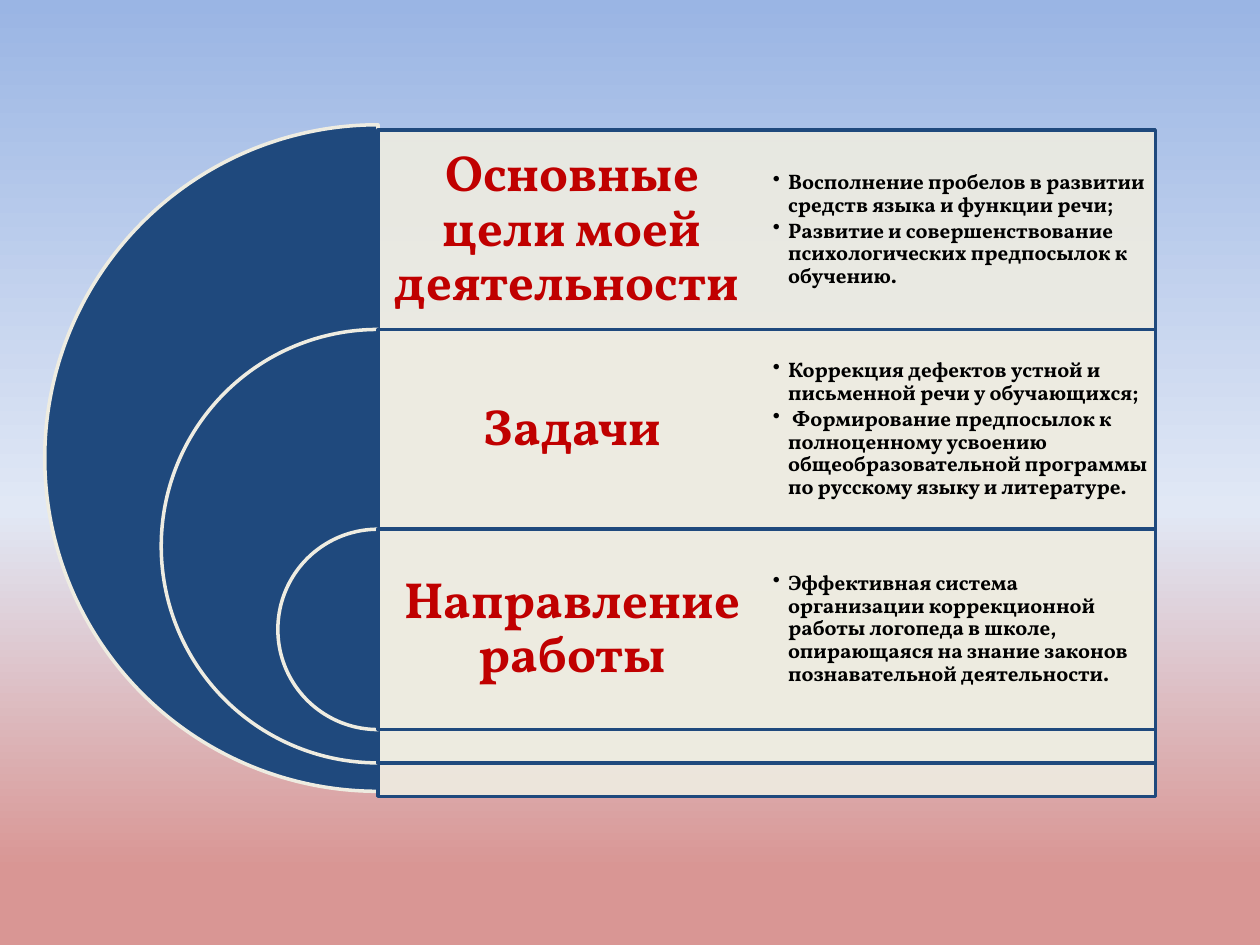
from copy import deepcopy

from lxml.etree import SubElement
from pptx import Presentation
from pptx.dml.color import RGBColor
from pptx.enum.shapes import MSO_SHAPE
from pptx.enum.text import MSO_ANCHOR, PP_ALIGN
from pptx.oxml.ns import qn
from pptx.util import Inches, Pt

# Content: heading and bullet points of each band
BANDS = [
    ("Основные цели моей деятельности ", [
        "Восполнение пробелов в развитии средств языка и функции речи;",
        "Развитие и совершенствование психологических предпосылок к обучению."]),
    ("Задачи", [
        "Коррекция дефектов устной и письменной речи у обучающихся;",
        " Формирование предпосылок к полноценному усвоению общеобразовательной "
        "программы по русскому языку и литературе."]),
    ("Направление работы", [
        "Эффективная система организации коррекционной работы логопеда в школе, "
        "опирающаяся на знание законов познавательной деятельности."]),
]
BACKGROUND = [(0, "9AB5E4"), (54, "E1E8F5"), (92, "D99694")]
NAVY, CREAM, RED, BLACK = "1F497D", "EEECE1", "C00000", "000000"
HEADING = {"margin": 0.12, "align": PP_ALIGN.CENTER, "after": 10.15,
           "font": {"size": Pt(29), "name": "Vollkorn", "bold": True}}
POINTS = {"margin": 0.05, "align": PP_ALIGN.LEFT, "after": 1.8,
          "font": {"size": Pt(12), "name": "Vollkorn", "bold": True}}

# Layout in inches
AXIS, TOP, COLUMN, BAND = 3, 1.03, 3.085, 1.585
DIAMETERS = [5.29, 3.44, 1.59]
PIE_TOPS = [0.99, TOP + BAND, TOP + 2 * BAND]


def color(value):
    return RGBColor.from_string(value)


def paint_background(slide):
    fill = slide.background.fill
    fill.gradient()
    fill.gradient_angle = 270
    stops = slide.background._cSld.find(".//" + qn("a:gsLst"))
    stops.append(deepcopy(stops[-1]))
    for stop, (position, shade) in zip(fill.gradient_stops, BACKGROUND):
        stop.position = position / 100
        stop.color.rgb = color(shade)


def add_panel(slide, kind, box, fill, line):
    panel = slide.shapes.add_shape(kind, *map(Inches, box))
    panel.shadow.inherit = False
    panel.fill.solid()
    panel.fill.fore_color.rgb = color(fill)
    panel.line.color.rgb = color(line)
    panel.line.width = Pt(2)
    return panel


def add_bullet(paragraph):
    properties = paragraph._p.get_or_add_pPr()
    properties.set("marL", str(Inches(0.12)))
    properties.set("indent", str(-Inches(0.12)))
    SubElement(properties, qn("a:buChar")).set("char", "•")


def add_text(slide, left, top, lines, style, shade, bulleted=False):
    box = slide.shapes.add_textbox(*map(Inches, (left, top, COLUMN, BAND)))
    frame = box.text_frame
    frame.word_wrap = True
    frame.vertical_anchor = MSO_ANCHOR.MIDDLE
    for side in ("left", "top", "right", "bottom"):
        setattr(frame, f"margin_{side}", Inches(style["margin"]))
    for index, line in enumerate(lines):
        paragraph = frame.add_paragraph() if index else frame.paragraphs[0]
        if bulleted:
            add_bullet(paragraph)
        paragraph.alignment = style["align"]
        paragraph.line_spacing = 0.9
        paragraph.space_after = Pt(style["after"])
        run = paragraph.add_run()
        run.text = line
        for name, value in style["font"].items():
            setattr(run.font, name, value)
        run.font.color.rgb = color(shade)


def main():
    deck = Presentation()
    deck.slide_width, deck.slide_height = Inches(10), Inches(7.5)
    slide = deck.slides.add_slide(deck.slide_layouts[6])
    paint_background(slide)

    for index, (heading, points) in enumerate(BANDS):
        top, diameter = TOP + index * BAND, DIAMETERS[index]
        # Half circle ending at the axis
        half = add_panel(slide, MSO_SHAPE.PIE,
                         (AXIS - diameter / 2, PIE_TOPS[index], diameter, diameter),
                         NAVY, CREAM)
        half.adjustments[0], half.adjustments[1] = 54, 162
        # Translucent panel as tall as its half circle
        panel = add_panel(slide, MSO_SHAPE.RECTANGLE,
                          (AXIS, top, 2 * COLUMN, diameter), CREAM, NAVY)
        tint = panel._element.spPr.find(qn("a:solidFill"))[0]
        SubElement(tint, qn("a:alpha")).set("val", "90000")
        # Heading and points side by side
        add_text(slide, AXIS, top, [heading], HEADING, RED)
        add_text(slide, AXIS + COLUMN, top, points, POINTS, BLACK, bulleted=True)

    deck.save("out.pptx")


if __name__ == "__main__":
    main()
